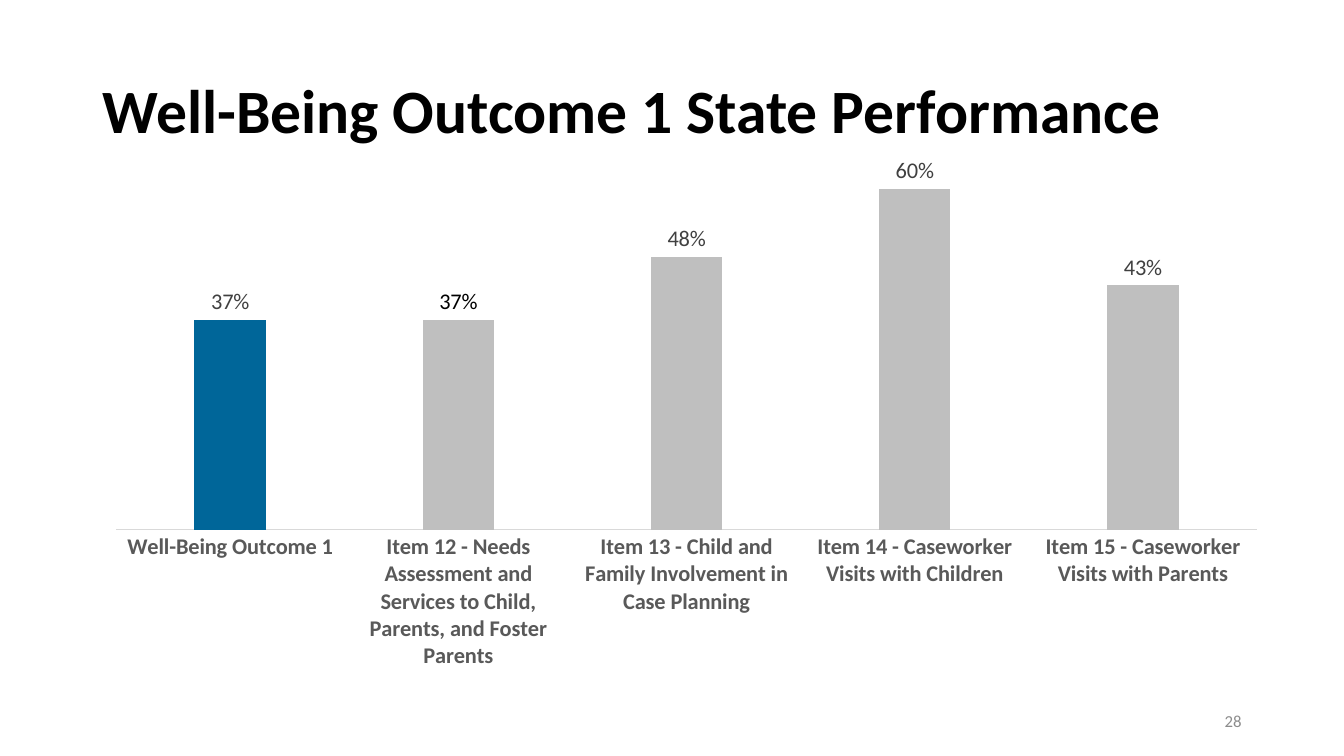
"""Build the Well-Being Outcome 1 state performance slide."""
import pptx
import pptx.chart.data
import pptx.dml.color
import pptx.enum.chart
import pptx.enum.text
import pptx.util

Pt = pptx.util.Pt


def colour(hex_value):
    return pptx.dml.color.RGBColor.from_string(hex_value)


def style(font, size, hex_value, bold=False):
    font.name = "Calibri"
    font.size = Pt(size)
    font.bold = bold
    font.color.rgb = colour(hex_value)


deck = pptx.Presentation()
deck.slide_width, deck.slide_height = Pt(960), Pt(540)
slide = deck.slides.add_slide(deck.slide_layouts[5])

heading = slide.shapes.title
heading.left, heading.top, heading.width, heading.height = Pt(66), Pt(28.8), Pt(828), Pt(104.4)
heading.text_frame.word_wrap = True
heading.text_frame.vertical_anchor = pptx.enum.text.MSO_ANCHOR.MIDDLE
heading_line = heading.text_frame.paragraphs[0]
heading_line.alignment = pptx.enum.text.PP_ALIGN.LEFT
heading_line.line_spacing = 0.9
heading_run = heading_line.add_run()
heading_run.text = "Well-Being Outcome 1 State Performance"
style(heading_run.font, 44, "000000", bold=True)

performance = {
    "Well-Being Outcome 1": 0.37,
    "Item 12 - Needs Assessment and Services to Child, Parents, and Foster Parents": 0.37,
    "Item 13 - Child and Family Involvement in Case Planning": 0.48,
    "Item 14 - Caseworker Visits with Children": 0.6,
    "Item 15 - Caseworker Visits with Parents": 0.43,
}
ratings = pptx.chart.data.CategoryChartData(number_format="0%")
ratings.categories = list(performance)
ratings.add_series("Series 1", list(performance.values()))
chart = slide.shapes.add_chart(
    pptx.enum.chart.XL_CHART_TYPE.COLUMN_CLUSTERED,
    Pt(66), Pt(86.4), Pt(848.9), Pt(400.3), ratings,
).chart
style(chart.font, 10, "000000")
chart.has_title = False
chart.has_legend = False

items_axis = chart.category_axis
items_axis.major_tick_mark = pptx.enum.chart.XL_TICK_MARK.NONE
items_axis.format.line.color.rgb = colour("D9D9D9")
items_axis.format.line.width = Pt(0.75)
style(items_axis.tick_labels.font, 16, "595959", bold=True)

percent_axis = chart.value_axis
percent_axis.visible = False
percent_axis.has_major_gridlines = False
percent_axis.minimum_scale, percent_axis.maximum_scale = 0, 0.7
percent_axis.tick_labels.number_format = "0%"
percent_axis.tick_labels.number_format_is_linked = False

columns = chart.plots[0]
columns.gap_width, columns.overlap = 219, -27
columns.vary_by_categories = False
state = columns.series[0]
state.format.fill.solid()
state.format.fill.fore_color.rgb = colour("4472C4")
for position in range(len(performance)):
    bar_fill = state.points[position].format.fill
    bar_fill.solid()
    bar_fill.fore_color.rgb = colour("BFBFBF" if position else "006699")

percentages = state.data_labels
percentages.show_value = True
percentages.number_format = "0%"
percentages.number_format_is_linked = False
percentages.position = pptx.enum.chart.XL_LABEL_POSITION.OUTSIDE_END
style(percentages.font, 16, "404040")
item_12_label = state.points[1].data_label
style(item_12_label.font, 16, "000000")
item_12_label.position = pptx.enum.chart.XL_LABEL_POSITION.OUTSIDE_END

page_number = slide.shapes.add_textbox(Pt(678), Pt(500.5), Pt(216), Pt(28.75)).text_frame
page_number.word_wrap = True
page_number.vertical_anchor = pptx.enum.text.MSO_ANCHOR.MIDDLE
page_line = page_number.paragraphs[0]
page_line.alignment = pptx.enum.text.PP_ALIGN.RIGHT
page_run = page_line.add_run()
page_run.text = "28"
style(page_run.font, 12, "8C8C8C")

deck.save("out.pptx")
